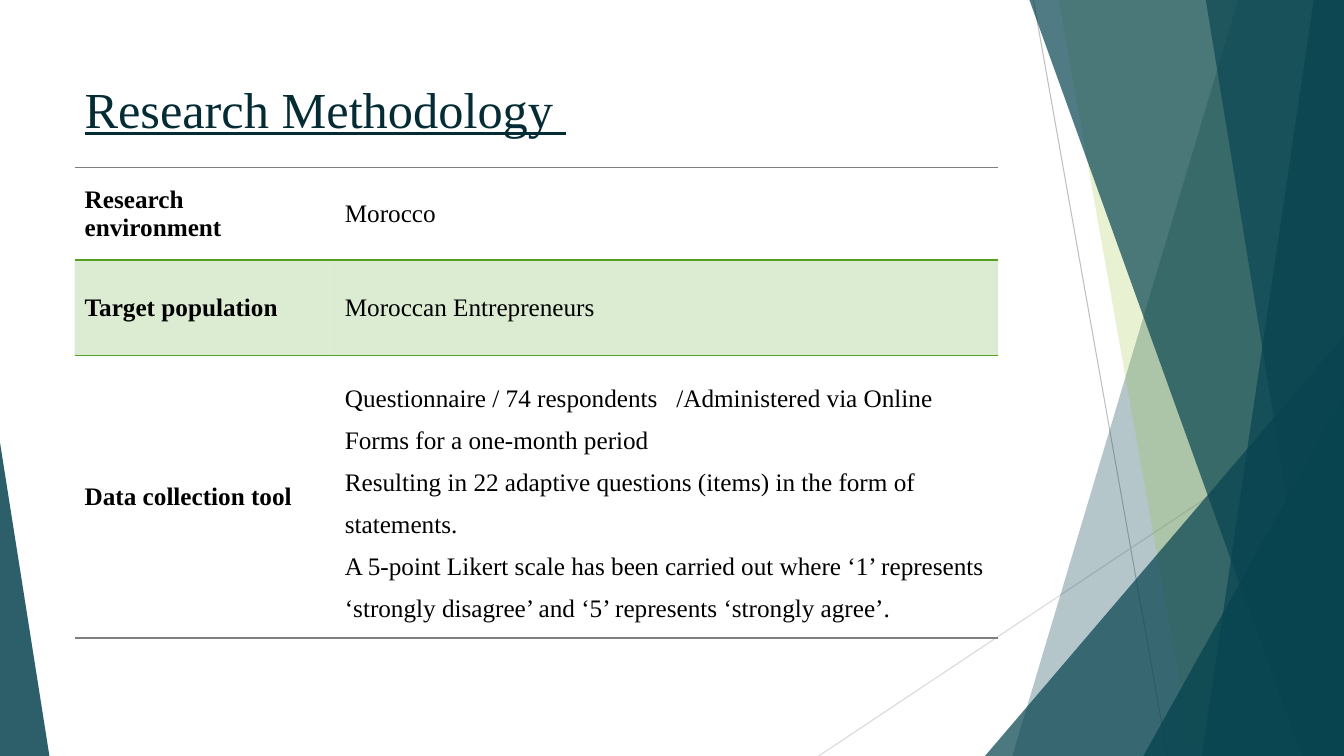
"""Build the Research Methodology slide: a three-row table beside a faceted teal backdrop."""
from lxml import etree
from pptx import Presentation
from pptx.dml.color import RGBColor
from pptx.enum.shapes import MSO_CONNECTOR, MSO_SHAPE
from pptx.enum.text import MSO_ANCHOR
from pptx.oxml.ns import qn
from pptx.util import Inches, Pt

STRAIGHT = MSO_CONNECTOR.STRAIGHT
TRIANGLE = MSO_SHAPE.ISOSCELES_TRIANGLE
TOP, MIDDLE = MSO_ANCHOR.TOP, MSO_ANCHOR.MIDDLE
NO_GRID_STYLE = "{2D5ABB26-0587-4C30-8999-92F81FD0307C}"

WIDTH, HEIGHT = 13.33, 7.5
TITLE = "Research Methodology "
ROWS = [
    ("Research environment", ["Morocco"]),
    ("Target population", ["Moroccan Entrepreneurs"]),
    ("Data collection tool", [
        "Questionnaire / 74 respondents   /Administered via Online Forms for a one-month period",
        "Resulting in 22 adaptive questions (items) in the form of statements.",
        "A 5-point Likert scale has been carried out where ‘1’ represents "
        "‘strongly disagree’ and ‘5’ represents ‘strongly agree’.",
    ]),
]
COLUMN_WIDTHS = [2.58, 6.58]
ROW_HEIGHTS = [0.92, 0.95, 2.63]
BANDED_ROW = 1

THEME = {
    "font": "Times New Roman", "title_size": 36, "body_size": 18,
    "title": "052C34", "text": "000000", "teal": "084450", "lime": "90C226",
    "green": "54A021", "rule": "7F7F7F", "ray": "BFBFBF", "pale_ray": "D9D9D9",
}

RAYS = [((10.25, 0), (11.58, HEIGHT), "ray"), ((WIDTH, 4.03), (8.12, HEIGHT), "pale_ray")]
# fmt: off
FACETS = [
    ("band", (12.28, 10.04), "teal", 30),
    ("band", (10.5, 11.83), "lime", 20),
    ("triangle", (9.77, 3.33, 3.56, 1), "teal", 72),
    ("band", (10.21, 12.91), "teal", 70),
    ("band", (13.03, 11.92), "teal", 70),
    ("band", (11.96, 13.18), "teal", 65),
    ("triangle", (11.34, 3.93, 1.99, 1), "teal", 80),
    ("triangle", (0, 4.39, 0.49, 0), "teal", 85),
]
# fmt: on


def color(name):
    return RGBColor.from_string(THEME[name])


def tint(fill, element, name, opacity):
    fill.solid()
    fill.fore_color.rgb = color(name)
    swatch = element.find(".//" + qn("a:srgbClr"))
    etree.SubElement(swatch, qn("a:alpha"), val=str(opacity * 1000))


def add_ray(page, start, end, name):
    ray = page.shapes.add_connector(STRAIGHT, *map(Inches, start + end))
    ray.line.color.rgb = color(name)
    ray.line.width = Pt(0.75)
    etree.SubElement(ray._element.spPr, qn("a:effectLst"))


def add_facet(page, kind, geometry, name, opacity):
    if kind == "band":
        top_x, bottom_x = geometry
        outline = [(WIDTH, 0), (WIDTH, HEIGHT), (bottom_x, HEIGHT)]
        builder = page.shapes.build_freeform(Inches(top_x), 0)
        builder.add_line_segments([(Inches(x), Inches(y)) for x, y in outline], close=True)
        facet = builder.convert_to_shape()
    else:
        left, top, width, apex = geometry
        facet = page.shapes.add_shape(TRIANGLE, *map(Inches, (left, top, width, HEIGHT - top)))
        facet.adjustments[0] = apex
    facet.shadow.inherit = False
    facet.line.fill.background()
    tint(facet.fill, facet._element.spPr, name, opacity)


def style(para, size, name, bold=False):
    para.font.name = THEME["font"]
    para.font.size = Pt(THEME[size])
    para.font.color.rgb = color(name)
    para.font.bold = bold


def add_title(page):
    box = page.shapes.add_textbox(*map(Inches, (0.74, 0.67, 9.4, 0.91)))
    frame = box.text_frame
    frame.word_wrap = True
    frame.vertical_anchor = TOP
    frame.margin_top = Inches(0.1)
    para = frame.paragraphs[0]
    para.text = TITLE
    style(para, "title_size", "title")
    para.font.underline = True


def add_border(cell, side, name):
    border = etree.Element(qn("a:" + side), w=str(Pt(1)))
    fill = etree.SubElement(border, qn("a:solidFill"))
    etree.SubElement(fill, qn("a:srgbClr"), val=THEME[name])
    cell._tc.get_or_add_tcPr().insert(0, border)


def fill_cell(cell, lines, bold, banded):
    cell.vertical_anchor = MIDDLE
    cell.text = "\n".join(lines)
    for para in cell.text_frame.paragraphs:
        style(para, "body_size", "text", bold)
        if len(lines) > 1:
            para.line_spacing = 1.5
    if banded:
        tint(cell.fill, cell._tc.get_or_add_tcPr(), "green", 20)
    else:
        cell.fill.background()


def add_method_table(page):
    size = (sum(COLUMN_WIDTHS), sum(ROW_HEIGHTS))
    frame = page.shapes.add_table(
        len(ROWS), len(COLUMN_WIDTHS), *map(Inches, (0.74, 1.66) + size))
    table = frame.table
    table.first_row = table.horz_banding = False
    table._tbl.tblPr.find(qn("a:tableStyleId")).text = NO_GRID_STYLE
    for column, width in zip(table.columns, COLUMN_WIDTHS):
        column.width = Inches(width)
    for index, (label, details) in enumerate(ROWS):
        table.rows[index].height = Inches(ROW_HEIGHTS[index])
        for side, lines in enumerate(([label], details)):
            fill_cell(table.cell(index, side), lines, side == 0, index == BANDED_ROW)
    for side in range(len(COLUMN_WIDTHS)):
        add_border(table.cell(0, side), "lnT", "rule")
        add_border(table.cell(BANDED_ROW - 1, side), "lnB", "green")
        add_border(table.cell(BANDED_ROW, side), "lnT", "green")
        add_border(table.cell(len(ROWS) - 1, side), "lnB", "rule")
    for side in range(len(COLUMN_WIDTHS)):
        properties = table.cell(0, side)._tc.tcPr
        properties.insert(0, properties.find(qn("a:lnT")))


def main():
    deck = Presentation()
    deck.slide_width, deck.slide_height = Inches(WIDTH), Inches(HEIGHT)
    page = deck.slides.add_slide(deck.slide_layouts[6])
    for ray in RAYS:
        add_ray(page, *ray)
    for facet in FACETS:
        add_facet(page, *facet)
    add_title(page)
    add_method_table(page)
    deck.save("out.pptx")


if __name__ == "__main__":
    main()
